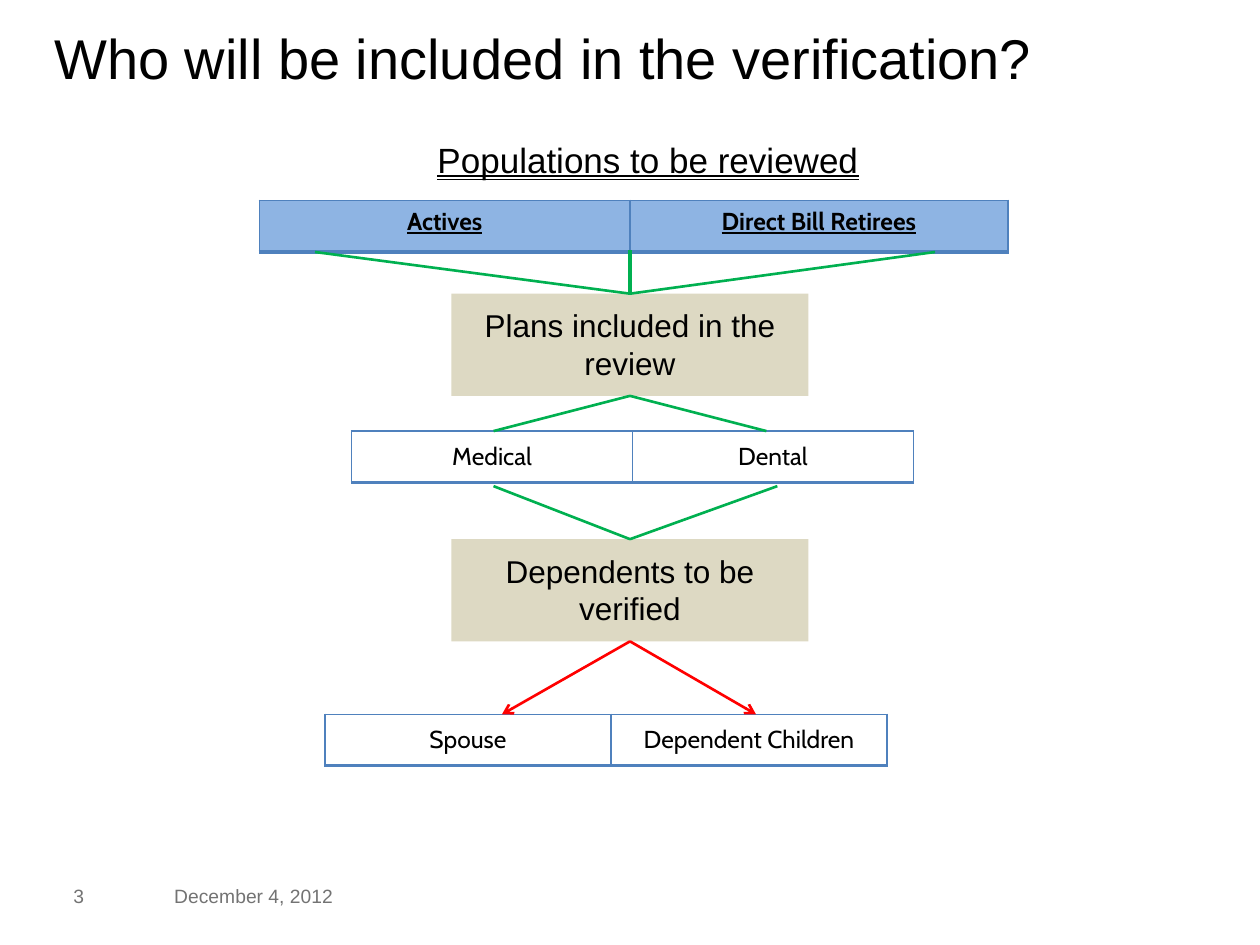
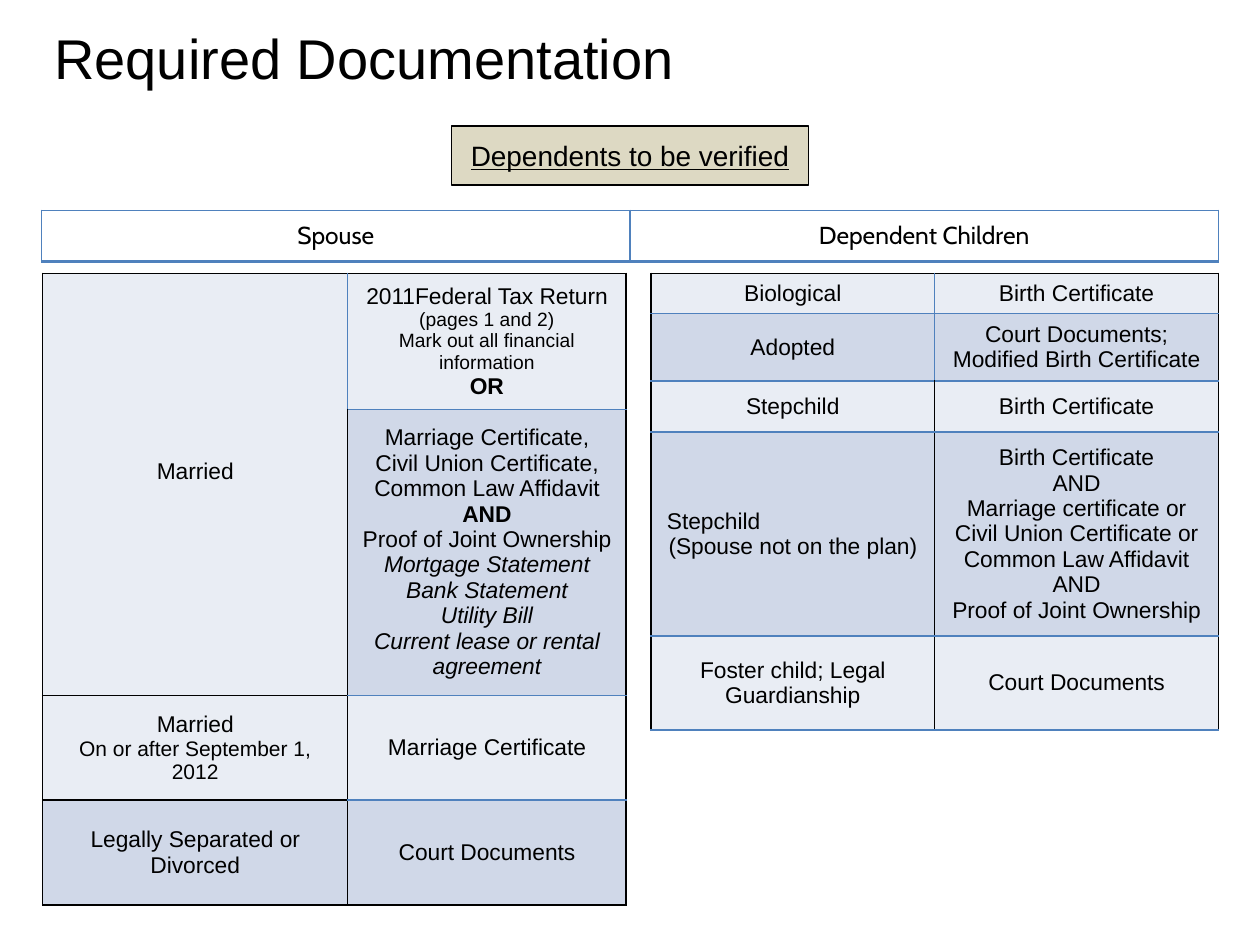
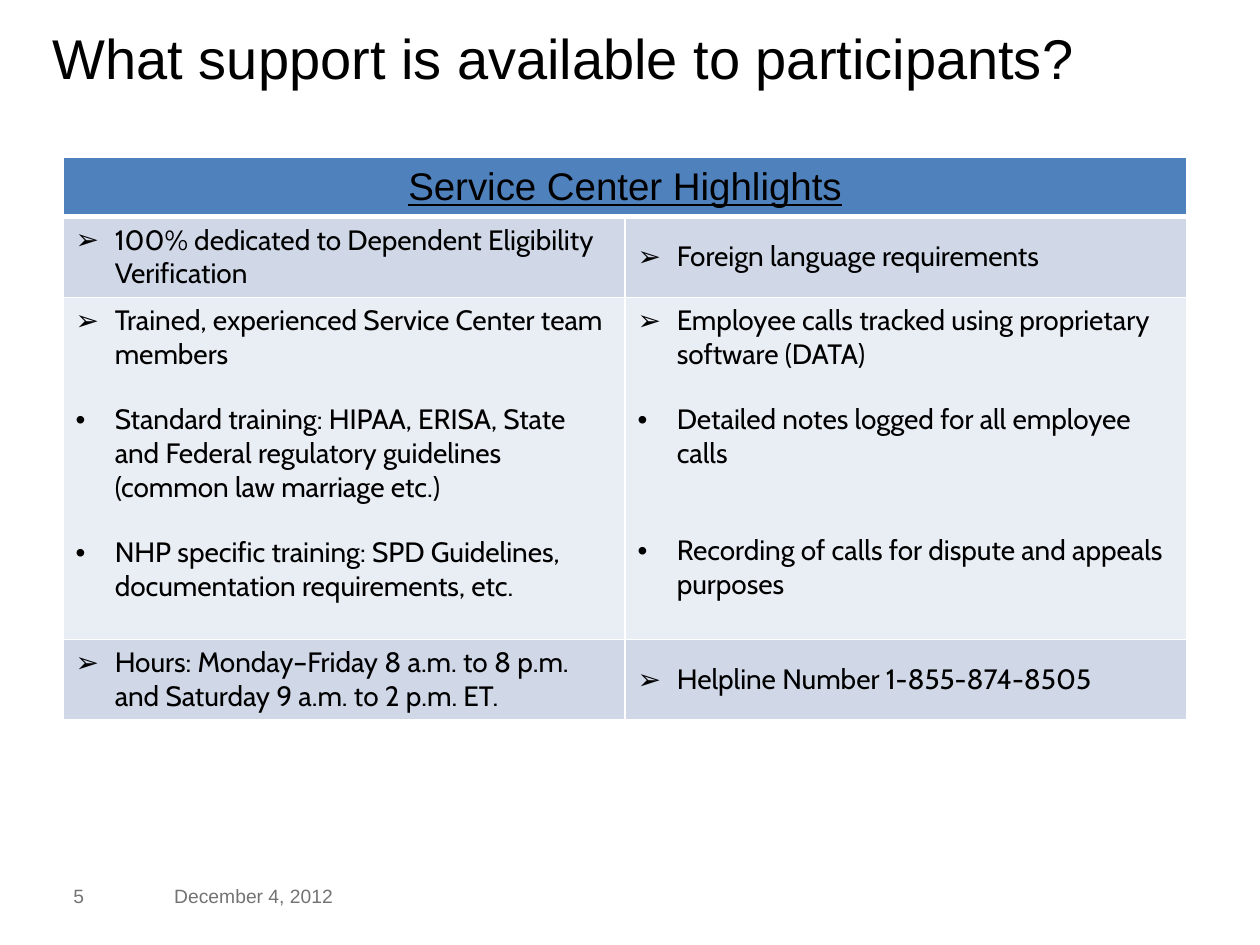
import pptx
import pptx.util
from pptx.dml.color import RGBColor
from pptx.enum.shapes import MSO_CONNECTOR, MSO_SHAPE
from pptx.enum.text import MSO_ANCHOR, MSO_UNDERLINE, PP_ALIGN
from pptx.oxml.ns import qn
from lxml import etree

Cm, Pt = pptx.util.Cm, pptx.util.Pt

BLACK = RGBColor(0x00, 0x00, 0x00)
WHITE = RGBColor(0xFF, 0xFF, 0xFF)
GREY = RGBColor(0x73, 0x73, 0x73)
BLUE = RGBColor(0x4F, 0x81, 0xBD)
SKY = RGBColor(0x8E, 0xB4, 0xE3)
PALE = RGBColor(0xE9, 0xED, 0xF4)
MIST = RGBColor(0xD0, 0xD8, 0xE8)
SAND = RGBColor(0xDD, 0xD9, 0xC3)
GREEN = RGBColor(0x00, 0xB0, 0x50)
RED = RGBColor(0xFF, 0x00, 0x00)

TITLE = {"name": "Arial", "size": Pt(32)}
FOOTER = {"name": "Arial", "size": Pt(11)}
LABEL = {"name": "Cabin", "size": Pt(14)}
BODY = {"name": "Arial", "size": Pt(13)}
POINT = {"name": "Cabin", "size": Pt(16)}

# Cell edges are given as four letters: left, top, right, bottom
EDGES = {"k": (BLACK, 1), "b": (BLUE, 1), "B": (BLUE, 2), "w": (WHITE, 1), "W": (WHITE, 3)}


def write(tf, paras, fmt, color=BLACK, align=PP_ALIGN.CENTER):
    """Fill a frame with paragraphs: a text, or a text with its own format and layout."""
    tf.word_wrap = True
    for i, para in enumerate(paras):
        text, own = (para, {}) if isinstance(para, str) else para
        own = dict(own)
        p = tf.paragraphs[0] if i == 0 else tf.add_paragraph()
        p.alignment = own.pop("align", align)
        if "before" in own:
            p.space_before = own.pop("before")
        pPr = p._p.get_or_add_pPr()
        for key in ("marL", "indent"):
            if key in own:
                pPr.set(key, str(int(own.pop(key))))
        if "bullet" in own:
            etree.SubElement(pPr, qn("a:buFont"), typeface="Arial")
            etree.SubElement(pPr, qn("a:buChar"), char=own.pop("bullet"))
        r = p.add_run()
        r.text = text
        r.font.color.rgb = color
        for key, value in {**fmt, **own}.items():
            setattr(r.font, key, value)


def add_grid(s, left, top, widths, rows, fmt, align=PP_ALIGN.CENTER):
    """Add a table from rows of (height, [(fill, edges, paragraphs), ...])."""
    heights = [height for height, cells in rows]
    table = s.shapes.add_table(len(rows), len(widths), Cm(left), Cm(top),
                               Cm(sum(widths)), Cm(sum(heights))).table
    table.first_row = table.horz_banding = False
    for col, width in zip(table.columns, widths):
        col.width = Cm(width)
    for i, (height, cells) in enumerate(rows):
        table.rows[i].height = Cm(height)
        for j, (fill, edges, paras) in enumerate(cells):
            cell = table.cell(i, j)
            cell.vertical_anchor = MSO_ANCHOR.MIDDLE
            tcPr = cell._tc.get_or_add_tcPr()
            sides = dict(zip("LTRB", edges))
            for side in "LRTB":
                color, width = EDGES[sides[side]]
                ln = etree.SubElement(tcPr, qn("a:ln" + side), w=str(int(Pt(width))))
                solid = etree.SubElement(ln, qn("a:solidFill"))
                etree.SubElement(solid, qn("a:srgbClr"), val=str(color))
            if fill is None:
                cell.fill.background()
            else:
                cell.fill.solid()
                cell.fill.fore_color.rgb = fill
            write(cell.text_frame, paras, fmt, align=align)
    return table


prs = pptx.Presentation()
prs.slide_width, prs.slide_height = Cm(25.4), Cm(19.05)

# Titles and footers
titles = ["Who will be included in the verification?", "Required Documentation",
          "What support is available to participants?"]
slides = []
for number, title in enumerate(titles, 3):
    s = prs.slides.add_slide(prs.slide_layouts[5])
    slides.append(s)
    sp = s.shapes.title
    sp.left, sp.top, sp.width, sp.height = Cm(0.84), Cm(-0.43), Cm(23.72), Cm(3.18)
    sp.text_frame.vertical_anchor = MSO_ANCHOR.MIDDLE
    write(sp.text_frame, [title], TITLE, align=PP_ALIGN.LEFT)
    if number == 4:
        continue
    for left, width, text in [(2.97, 4.29, "December 4, 2012"), (0.84, 1.5, str(number))]:
        tf = s.shapes.add_textbox(Cm(left), Cm(17.5), Cm(width), Cm(1.12)).text_frame
        tf.vertical_anchor = MSO_ANCHOR.MIDDLE
        write(tf, [text], FOOTER, GREY)
slides[2].shapes.title.left = Cm(0.81)

# Sand-coloured boxes
boxes = []
for s, top, height, text, fmt in [
        (slides[0], 5.92, 2.06, "Plans included in the review", {"size": Pt(18)}),
        (slides[0], 10.87, 2.06, "Dependents to be verified", {"size": Pt(18)}),
        (slides[1], 2.54, 1.19, "Dependents to be verified",
         {"size": Pt(16), "underline": True})]:
    sp = s.shapes.add_shape(MSO_SHAPE.RECTANGLE, Cm(9.1), Cm(top), Cm(7.2), Cm(height))
    sp.shadow.inherit = False
    sp.fill.solid()
    sp.fill.fore_color.rgb = SAND
    sp.line.fill.background()
    tf = sp.text_frame
    tf.vertical_anchor = MSO_ANCHOR.TOP
    for side in ("left", "top", "right", "bottom"):
        setattr(tf, "margin_" + side, Cm(0.25))
    write(tf, [text], {"name": "Arial", **fmt})
    boxes.append(sp)
plans, dependents, heading = boxes
heading.line.color.rgb = BLACK
heading.line.width = Pt(0.75)

# Slide 1: who is included
s = slides[0]
tf = s.shapes.add_textbox(Cm(8.57), Cm(2.54), Cm(9.2), Cm(1.37)).text_frame
tf.margin_top = Cm(0.25)
write(tf, ["Populations to be reviewed"],
      {"name": "Arial", "size": Pt(20), "underline": MSO_UNDERLINE.DOUBLE_LINE},
      align=PP_ALIGN.LEFT)

strong = {"bold": True, "underline": True}
populations = add_grid(s, 5.23, 4.04, [7.47, 7.62], [
    (1.04, [(SKY, "bbbB", [(text, strong)]) for text in ("Actives", "Direct Bill Retirees")])],
    LABEL)
for cell in populations.iter_cells():
    cell.vertical_anchor = MSO_ANCHOR.TOP

for s, left, top, widths, names in [
        (slides[0], 7.09, 8.69, [5.66, 5.66], ("Medical", "Dental")),
        (slides[0], 6.55, 14.4, [5.77, 5.56], ("Spouse", "Dependent Children")),
        (slides[1], 0.84, 4.24, [11.86, 11.86], ("Spouse", "Dependent Children"))]:
    add_grid(s, left, top, widths, [(1.04, [(None, "bbbB", [name]) for name in names])], LABEL)

for box, site, x, y, color, width in [
        (plans, 0, 6.35, 5.08, GREEN, 1.5),
        (plans, 0, 12.7, 5.03, GREEN, 2.25),
        (plans, 0, 18.85, 5.08, GREEN, 1.5),
        (plans, 2, 9.95, 8.69, GREEN, 1.5),
        (plans, 2, 15.45, 8.69, GREEN, 1.5),
        (dependents, 0, 9.95, 9.8, GREEN, 1.5),
        (dependents, 0, 15.67, 9.8, GREEN, 1.5),
        (dependents, 2, 10.12, 14.4, RED, 1.5),
        (dependents, 2, 15.24, 14.4, RED, 1.5)]:
    line = slides[0].shapes.add_connector(MSO_CONNECTOR.STRAIGHT, 0, 0, Cm(x), Cm(y))
    line.begin_connect(box, site)
    line.line.color.rgb = color
    line.line.width = Pt(width)
    if color == RED:
        etree.SubElement(line.line._get_or_add_ln(), qn("a:tailEnd"), type="arrow")
    etree.SubElement(line._element.spPr, qn("a:effectLst"))

# Slide 2: documents for each dependent
s = slides[1]
small = {"size": Pt(11)}
italic = {"italic": True}
joiner = {"bold": True, "marL": 0, "indent": Cm(-0.8)}
spouse = add_grid(s, 0.86, 5.51, [6.15, 5.61], [
    (2.74, [(PALE, "kkbk", ["Married"]),
            (PALE, "bkkb", ["2011Federal Tax Return", ("(pages 1 and 2)", small),
                            ("Mark out all financial information", small),
                            ("OR", joiner)])]),
    (5.77, [(PALE, "kkkk", []),
            (MIST, "kbkb", ["Marriage Certificate, Civil Union Certificate, Common Law Affidavit",
                            ("AND", joiner),
                            "Proof of Joint Ownership",
                            ("Mortgage Statement", italic),
                            ("Bank Statement", italic),
                            ("Utility Bill", italic),
                            ("Current lease or rental agreement", italic)])]),
    (2.11, [(PALE, "kkkk", ["Married", ("On or after September 1, 2012", {"size": Pt(12)})]),
            (PALE, "kbkb", ["Marriage Certificate"])]),
    (2.11, [(MIST, "kkkk", ["Legally Separated or Divorced"]),
            (MIST, "kbkk", ["Court Documents"])])], BODY)
married = spouse.cell(0, 0)
married.merge(spouse.cell(1, 0))
married.margin_bottom = Cm(0.63)

add_grid(s, 13.12, 5.51, [5.72, 5.72], [
    (0.81, [(PALE, "kkbb", ["Biological"]), (PALE, "bkkb", ["Birth Certificate"])]),
    (1.36, [(MIST, "kbbb", ["Adopted"]),
            (MIST, "bbkb", ["Court Documents; Modified Birth Certificate"])]),
    (1.03, [(PALE, "kbkb", ["Stepchild"]), (PALE, "kbkb", ["Birth Certificate"])]),
    (4.11, [(MIST, "kbkb", [("Stepchild", {"align": PP_ALIGN.LEFT, "marL": Cm(0.07)}),
                            "(Spouse not on the plan)"]),
            (MIST, "kbkb", ["Birth Certificate", "AND",
                            "Marriage certificate or Civil Union Certificate or "
                            "Common Law Affidavit",
                            "AND", "Proof of Joint Ownership"])]),
    (1.9, [(PALE, "kbkb", ["Foster child; Legal Guardianship"]),
           (PALE, "kbkb", ["Court Documents"])])], BODY)

# Slide 3: service center
s = slides[2]
hanging = {"marL": Cm(0.79), "indent": Cm(-0.79)}
arrow = {**hanging, "bullet": "➢"}
dot = {**hanging, "bullet": "•", "before": Pt(18)}
header = {"name": "Arial", "size": Pt(22), "underline": True, "align": PP_ALIGN.CENTER}
support = add_grid(s, 1.27, 3.18, [11.33, 11.33], [
    (1.12, [(BLUE, "wwwW", [("Service Center Highlights", header)]), (BLUE, "wwwW", [])]),
    (1.63, [(MIST, "wWww", [("100% dedicated to Dependent Eligibility Verification", arrow)]),
            (MIST, "wWww", [("Foreign language requirements", arrow)])]),
    (6.9, [(PALE, "wwww", [
        ("Trained, experienced Service Center team members", arrow),
        ("Standard training: HIPAA, ERISA, State and Federal regulatory guidelines "
         "(common law marriage etc.)", dot),
        ("NHP specific training: SPD Guidelines, documentation requirements, etc.", dot)]),
           (PALE, "wwww", [
               ("Employee calls tracked using proprietary software (DATA)", arrow),
               ("Detailed notes logged for all employee calls", dot),
               ("Recording of calls for dispute and appeals purposes",
                {**dot, "before": Pt(36)})])]),
    (1.61, [(MIST, "wwww", [("Hours: Monday–Friday 8 a.m. to 8 p.m. and Saturday "
                             "9 a.m. to 2 p.m. ET.", arrow)]),
            (MIST, "wwww", [("Helpline Number 1-855-874-8505", arrow)])])],
    POINT, align=PP_ALIGN.LEFT)
support.cell(0, 0).merge(support.cell(0, 1))
for j in range(2):
    support.cell(2, j).vertical_anchor = MSO_ANCHOR.TOP

prs.save("out.pptx")
